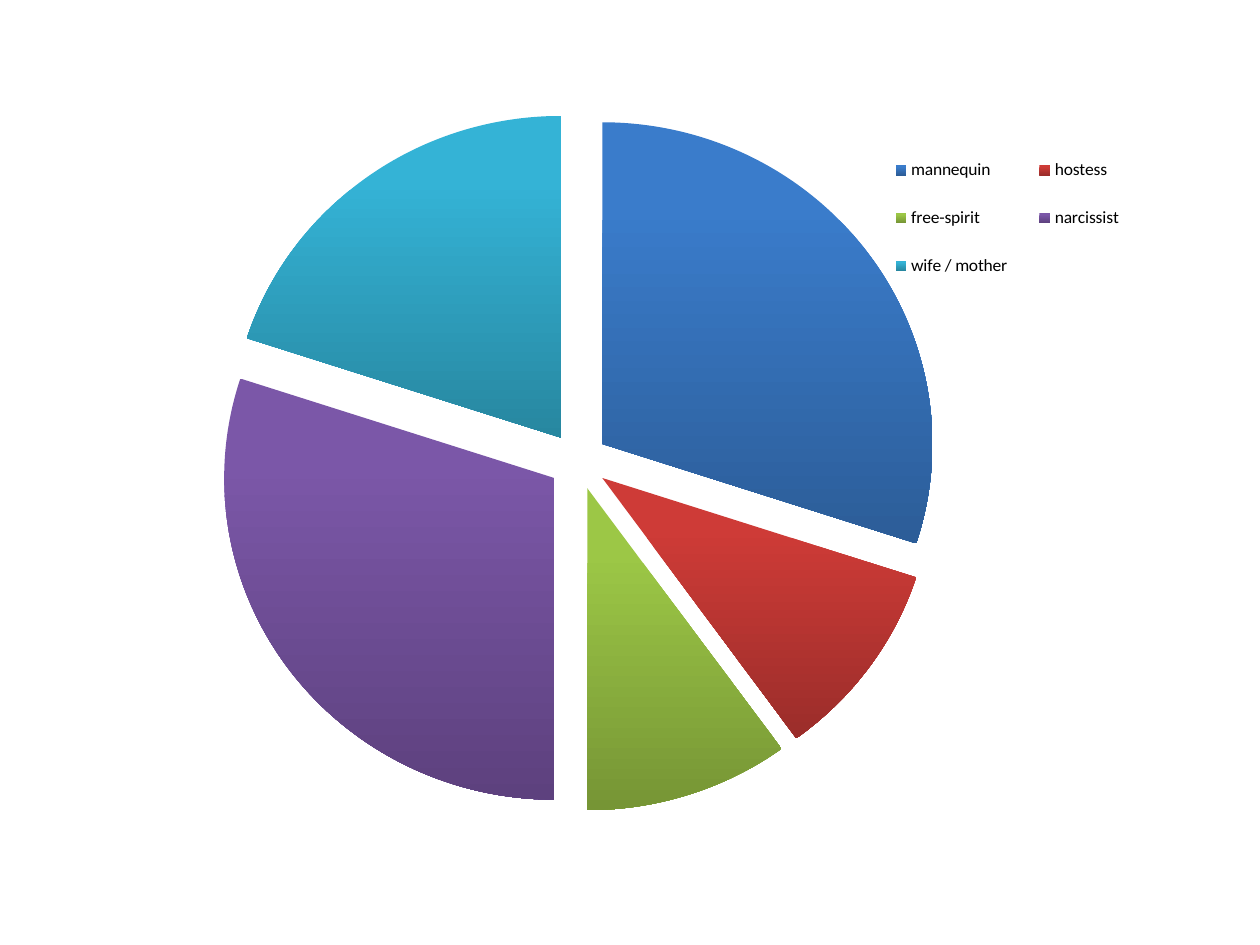
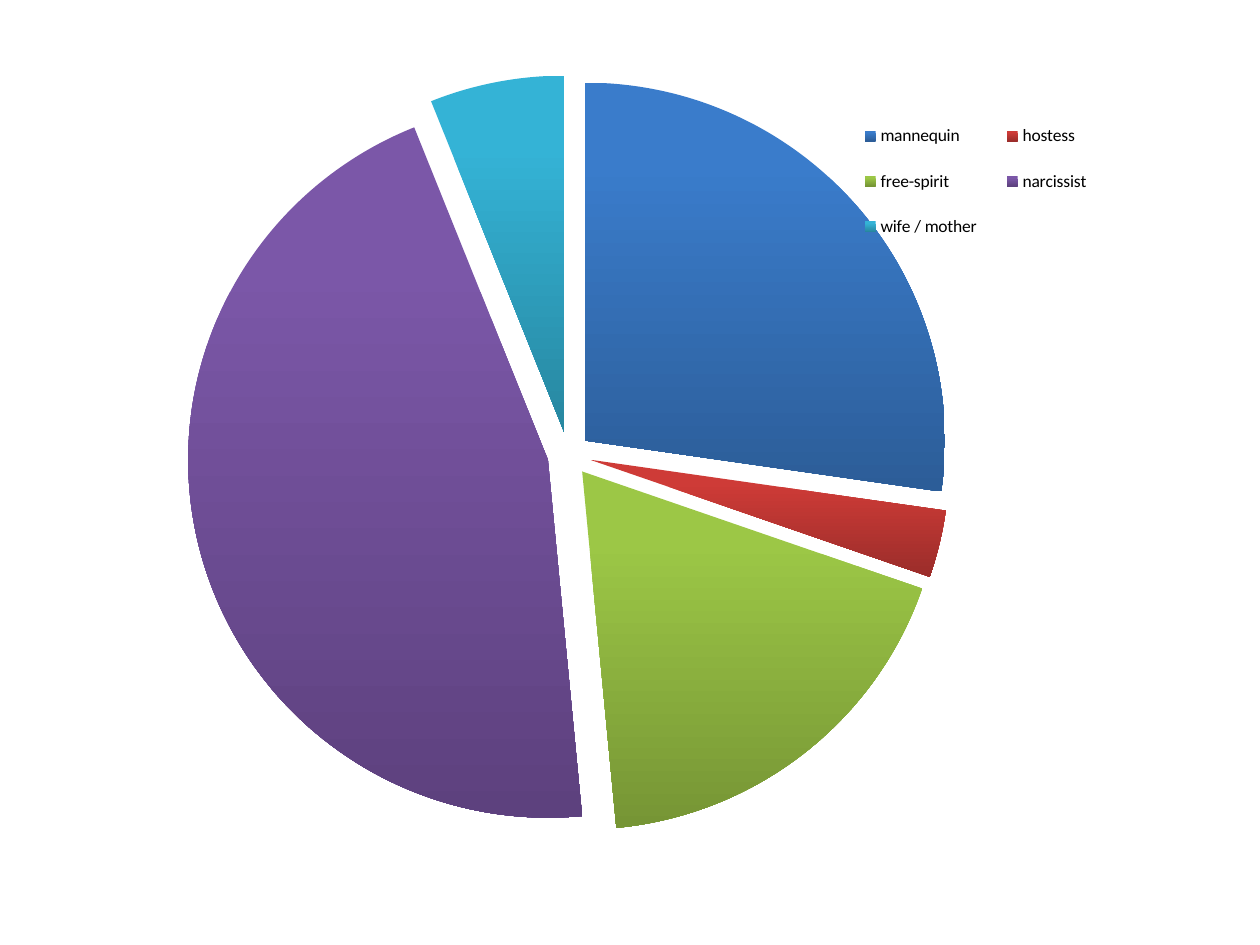
"""Build two slides that each show an exploded pie chart of five roles."""
from lxml import etree
from pptx import Presentation
from pptx.chart.data import CategoryChartData
from pptx.dml.color import RGBColor
from pptx.enum.chart import XL_CHART_TYPE, XL_LEGEND_POSITION
from pptx.oxml.ns import qn
from pptx.util import Inches, Pt

FONT = "Calibri"
TEXT_COLOR = "000000"
ROLES = {
    "mannequin": ("3A7CCB", "2C5D98"),
    "hostess": ("CE3B37", "9B2D2A"),
    "free-spirit": ("9CC746", "769535"),
    "narcissist": ("7B57A8", "5D417E"),
    "wife / mother": ("34B3D6", "2787A0"),
}
PIES = [
    {"values": (30, 10, 10, 30, 20), "explosion": 9,
     "frame": (1.14, 0.92, 7.95, 5.51),
     "plot": (1.97, 1.06, 5.24, 5.24), "legend": (6.9, 1.0, 2.19, 1.4)},
    {"values": (27, 3, 18, 45, 6), "explosion": 6,
     "frame": (1.22, 0.6, 7.64, 5.98),
     "plot": (1.66, 0.74, 5.71, 5.71), "legend": (6.67, 0.77, 2.15, 1.29)},
]


def color(code):
    return RGBColor.from_string(code)


def place(part, index, area, frame):
    """Fix a chart part at a slide area given in inches."""
    for old in part.findall(qn("c:layout")):
        part.remove(old)
    layout = etree.Element(qn("c:layout"))
    manual = etree.SubElement(layout, qn("c:manualLayout"))
    if part.tag == qn("c:plotArea"):
        etree.SubElement(manual, qn("c:layoutTarget"), val="inner")
    for axis in "xy":
        etree.SubElement(manual, qn(f"c:{axis}Mode"), val="edge")
    left, top, width, height = frame
    shares = {"x": (area[0] - left) / width, "y": (area[1] - top) / height,
              "w": area[2] / width, "h": area[3] / height}
    for name, share in shares.items():
        etree.SubElement(manual, qn(f"c:{name}"), val=f"{share:.4f}")
    part.insert(index, layout)


deck = Presentation()
deck.slide_width, deck.slide_height = Inches(10), Inches(7.5)

for pie in PIES:
    page = deck.slides.add_slide(deck.slide_layouts[6])
    chart_data = CategoryChartData()
    chart_data.categories = list(ROLES)
    chart_data.add_series("Series 1", pie["values"])
    chart = page.shapes.add_chart(
        XL_CHART_TYPE.PIE, *map(Inches, pie["frame"]), chart_data).chart
    chart.has_title = False
    chart.font.name = FONT
    chart.font.size = Pt(10)
    chart.font.color.rgb = color(TEXT_COLOR)
    chart.has_legend = True
    chart.legend.position = XL_LEGEND_POSITION.RIGHT
    chart.legend.include_in_layout = False

    plot = chart.plots[0]
    plot.vary_by_categories = True
    series = plot.series[0]
    for number, shades in enumerate(ROLES.values()):
        slice_format = series.points[number].format
        slice_format.line.fill.background()
        slice_format.fill.gradient()
        slice_format.fill.gradient_angle = 270
        stops = slice_format.fill.gradient_stops
        for stop, shade, position in zip(stops, shades, (0.2, 1)):
            stop.color.rgb = color(shade)
            stop.position = position
    for point in series._element.findall(qn("c:dPt")):
        explosion = etree.Element(qn("c:explosion"), val=str(pie["explosion"]))
        point.find(qn("c:spPr")).addprevious(explosion)

    chart_part = chart._chartSpace.find(qn("c:chart"))
    place(chart_part.find(qn("c:plotArea")), 0, pie["plot"], pie["frame"])
    place(chart_part.find(qn("c:legend")), 1, pie["legend"], pie["frame"])

deck.save("out.pptx")
